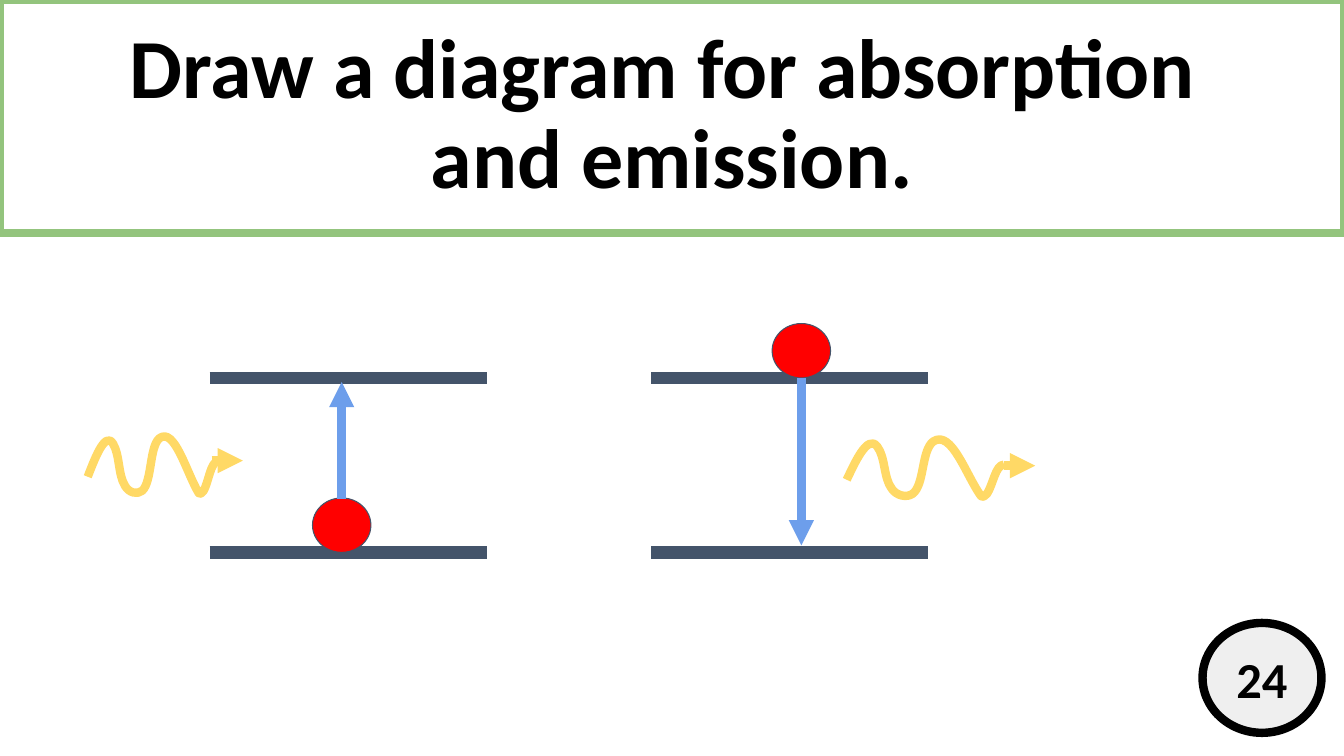
"""Build a slide that shows absorption and emission between two energy levels."""
from dataclasses import dataclass

from lxml import etree
from pptx import Presentation
from pptx.dml.color import RGBColor
from pptx.enum.shapes import MSO_CONNECTOR, MSO_SHAPE
from pptx.enum.text import MSO_ANCHOR, MSO_AUTO_SIZE, PP_ALIGN
from pptx.oxml.ns import qn
from pptx.util import Inches, Pt

LINE, OVAL = MSO_CONNECTOR.STRAIGHT, MSO_SHAPE.OVAL
MIDDLE, CENTER, NO_FIT = MSO_ANCHOR.MIDDLE, PP_ALIGN.CENTER, MSO_AUTO_SIZE.NONE


@dataclass
class Theme:
    font: str = "Calibri"
    big: int = 60
    small: int = 36
    ink: str = "000000"
    green: str = "93C47D"
    grey: str = "EFEFEF"
    slate: str = "44546A"
    red: str = "FF0000"
    blue: str = "6D9EEB"
    gold: str = "FFD966"


theme = Theme()


def draw_line(start, end, color, width, arrow=False):
    line = slide.shapes.add_connector(LINE, *(Inches(v) for v in start + end))
    line.line.color.rgb = RGBColor.from_string(color)
    line.line.width = Pt(width)
    props = line.element.spPr
    if arrow:
        etree.SubElement(props.find(qn("a:ln")), qn("a:tailEnd"), type="triangle")
    etree.SubElement(props, qn("a:effectLst"))


def style(shape, fill, edge, width, size=0):
    shape.shadow.inherit = False
    if fill:
        shape.fill.solid()
        shape.fill.fore_color.rgb = RGBColor.from_string(fill)
    else:
        shape.fill.background()
    shape.line.color.rgb = RGBColor.from_string(edge)
    shape.line.width = Pt(width)
    if size:
        shape.text_frame.vertical_anchor = MIDDLE
        for par in shape.text_frame.paragraphs:
            par.alignment = CENTER
            for run in par.runs:
                run.font.name, run.font.size, run.font.bold = theme.font, Pt(size), True
                run.font.color.rgb = RGBColor.from_string(theme.ink)


deck = Presentation()
deck.slide_width, deck.slide_height = Inches(40 / 3), Inches(7.5)
slide = deck.slides.add_slide(deck.slide_layouts[5])

title = slide.shapes.title
title.left, title.top, title.width, title.height = 0, 0, deck.slide_width, Inches(2.31)
title.text_frame.text = "Draw a diagram for absorption \nand emission."
title.text_frame.auto_size = NO_FIT
style(title, None, theme.green, 6, theme.big)
for par in title.text_frame.paragraphs:
    par.line_spacing = 0.9

badge = slide.shapes.add_shape(OVAL, Inches(11.93), Inches(6.18), Inches(1.18), Inches(1.09))
badge.text_frame.text = "24"
frame = badge.text_frame
frame.margin_left = frame.margin_right = frame.margin_top = frame.margin_bottom = Inches(0.1)
style(badge, theme.grey, theme.ink, 6, theme.small)

HIGH, LOW, SPAN = 3.75, 5.48, 2.75
for left in (2.08, 6.46):
    for level in (LOW, HIGH):
        draw_line((left, level), (left + SPAN, level), theme.slate, 9)

WIDE, TALL = 0.58, 0.54
for mid, level, start, end in ((3.39, LOW, 4.95, 3.79), (7.95, HIGH, HIGH, 5.41)):
    ball = slide.shapes.add_shape(OVAL, Inches(mid - WIDE / 2), Inches(level - TALL),
                                  Inches(WIDE), Inches(TALL))
    style(ball, theme.red, theme.slate, 0.75)
    draw_line((mid, start), (mid, end), theme.blue, 6, True)

START, DEPTH = 0.4, 0.57
CURVES = [
    [(0.06, 0.25), (0.17, -0.06), (0.25, 0.07)],
    [(0.32, 0.18), (0.30, 0.38), (0.37, 0.49)],
    [(0.41, 0.56), (0.49, 0.58), (0.54, 0.54)],
    [(0.64, 0.45), (0.61, 0.11), (0.71, 0.02)],
    [(0.86, -0.10), (0.98, 0.36), (1.10, 0.56)],
    [(1.11, 0.58), (1.14, 0.56), (1.15, 0.54)],
    [(1.20, 0.45), (1.22, 0.25), (1.29, 0.25)],
]
for left, top, scale, tip, row in ((0.87, 4.33, 1, 2.1, 4.57), (8.4, 4.36, 1.21, 9.96, 4.62)):
    form = slide.shapes.build_freeform(Inches(left), Inches(top + START))
    ends = [curve[-1] for curve in CURVES]
    form.add_line_segments([(Inches(left + x * scale), Inches(top + y)) for x, y in ends],
                           close=False)
    wave = form.convert_to_shape()
    wave.top, wave.height = Inches(top), Inches(DEPTH)
    track = next(wave.element.iter(qn("a:path")))
    track.set("h", str(Inches(DEPTH)))
    track.find(qn("a:moveTo"))[0].set("y", str(Inches(START)))
    for side, curve in zip(track.findall(qn("a:lnTo")), CURVES):
        bend = etree.Element(qn("a:cubicBezTo"))
        for x, y in curve:
            etree.SubElement(bend, qn("a:pt"), x=str(Inches(x * scale)), y=str(Inches(y)))
        track.replace(side, bend)
    style(wave, None, theme.gold, 6)
    draw_line((tip, row), (tip + 0.31, row), theme.gold, 6, True)

deck.save("out.pptx")
